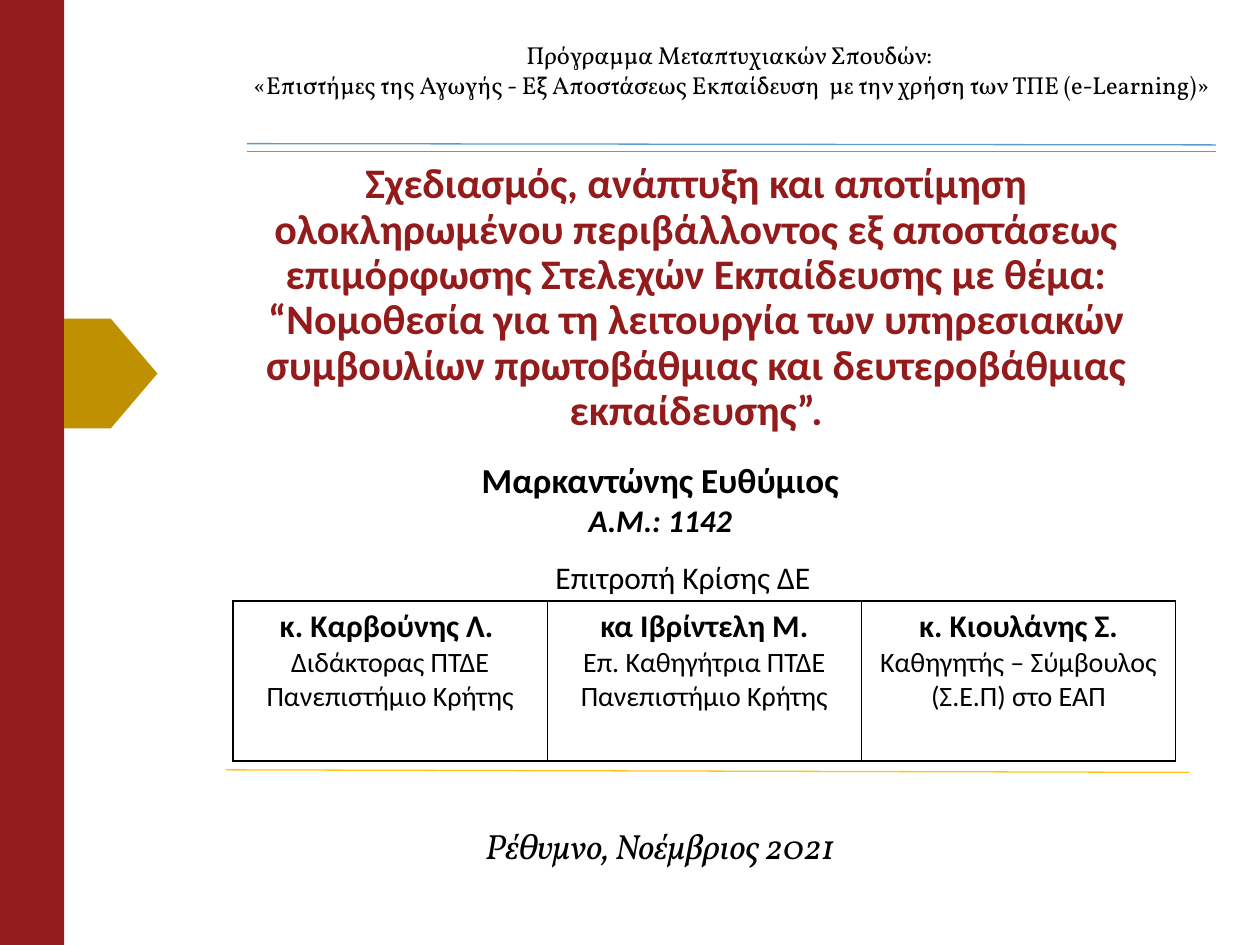
from lxml import etree
from pptx import Presentation
from pptx.dml.color import RGBColor
from pptx.enum.shapes import MSO_CONNECTOR as Connector, MSO_SHAPE as Shape
from pptx.enum.text import MSO_ANCHOR as Anchor, MSO_AUTO_SIZE as AutoSize, PP_ALIGN as Align
from pptx.oxml import parse_xml
from pptx.oxml.ns import nsdecls, qn
from pptx.util import Inches, Pt

BLACK = RGBColor(0x00, 0x00, 0x00)
WHITE = RGBColor(0xFF, 0xFF, 0xFF)
RED = RGBColor(0x93, 0x1B, 0x1B)
OCHRE = RGBColor(0xBF, 0x90, 0x00)
BLUE = RGBColor(0x5B, 0x9B, 0xD5)
YELLOW = RGBColor(0xFF, 0xC6, 0x1A)


def write(frame, text, size, first=True, font="Calibri", color=BLACK,
          bold=False, italic=False, spacing=1.0):
    """Put one centred paragraph in the frame, after the others unless first."""
    frame.word_wrap = True
    para = frame.paragraphs[0] if first else frame.add_paragraph()
    para.alignment = Align.CENTER
    para.line_spacing = spacing
    span = para.add_run()
    span.text = text
    span.font.name = font
    span.font.size = Pt(size)
    span.font.bold = bold
    span.font.italic = italic
    span.font.color.rgb = color


def add_text_box(left, top, width, height):
    box = page.shapes.add_textbox(Inches(left), Inches(top), Inches(width), Inches(height))
    return box.text_frame


deck = Presentation()
deck.slide_width = Inches(10)
deck.slide_height = Inches(7.5)
page = deck.slides.add_slide(deck.slide_layouts[5])

# Side band and pointer
for kind, left, top, width, height, color in (
    (Shape.RECTANGLE, 0, 0, 0.51, 7.5, RED),
    (Shape.PENTAGON, 0.51, 2.53, 0.74, 0.87, OCHRE),
):
    shape = page.shapes.add_shape(kind, Inches(left), Inches(top), Inches(width), Inches(height))
    shape.shadow.inherit = False
    shape.fill.solid()
    shape.fill.fore_color.rgb = color
    shape.line.fill.background()

# Title
title = page.shapes.title
title.left, title.top = Inches(2.01), Inches(1.39)
title.width, title.height = Inches(7.03), Inches(2.44)
frame = title.text_frame
frame.auto_size = AutoSize.NONE
frame.vertical_anchor = Anchor.BOTTOM
frame.margin_bottom = Inches(0.38)
write(frame, "Σχεδιασμός, ανάπτυξη και αποτίμηση ολοκληρωμένου περιβάλλοντος "
      "εξ αποστάσεως επιμόρφωσης Στελεχών Εκπαίδευσης με θέμα: “Νομοθεσία για τη "
      "λειτουργία των υπηρεσιακών συμβουλίων πρωτοβάθμιας και δευτεροβάθμιας "
      "εκπαίδευσης”.", 24, color=RED, bold=True, spacing=0.9)

# Rules
for left, top, right, bottom, color in (
    (1.96, 1.14, 9.65, 1.15, BLUE),
    (1.96, 1.2, 9.65, 1.2, BLUE),
    (1.79, 6.11, 9.44, 6.13, YELLOW),
):
    rule = page.shapes.add_connector(Connector.STRAIGHT, Inches(left), Inches(top),
                                     Inches(right), Inches(bottom))
    rule.line.color.rgb = color
    rule.line.width = Pt(0.75)
    etree.SubElement(rule._element.spPr, qn("a:effectLst"))

# Programme, author, committee heading and date
programme = add_text_box(1.76, 0.27, 8.1, 0.57)
write(programme, "Πρόγραμμα Μεταπτυχιακών Σπουδών: ", 14, font="Vollkorn")
write(programme, "«Επιστήμες της Αγωγής - Εξ Αποστάσεως Εκπαίδευση  με την χρήση "
      "των ΤΠΕ (e-Learning)»", 14, first=False, font="Vollkorn")

author = add_text_box(1.5, 3.59, 7.48, 0.74)
write(author, "Μαρκαντώνης Ευθύμιος", 20, bold=True)
write(author, "Α.Μ.: 1142", 18, first=False, bold=True, italic=True)

write(add_text_box(1.68, 4.38, 7.48, 0.4), "Επιτροπή Κρίσης ΔΕ", 18)

date = add_text_box(1.3, 6.49, 7.88, 0.44)
date.vertical_anchor = Anchor.MIDDLE
write(date, "Ρέθυμνο, Νοέμβριος 2021", 20, font="Vollkorn", italic=True)

# Committee
committee = (
    ("κ. Καρβούνης Λ. ", "Διδάκτορας ΠΤΔΕ", "Πανεπιστήμιο Κρήτης"),
    ("κα Ιβρίντελη M.", "Επ. Καθηγήτρια ΠΤΔΕ", "Πανεπιστήμιο Κρήτης"),
    ("κ. Κιουλάνης Σ.", "Καθηγητής – Σύμβουλος (Σ.Ε.Π) στο ΕΑΠ"),
)
table = page.shapes.add_table(1, len(committee), Inches(1.85), Inches(4.77),
                              Inches(7.48), Inches(1.27)).table
for cell, (name, *posts) in zip(table.rows[0].cells, committee):
    write(cell.text_frame, name, 18, bold=True)
    for post in posts:
        write(cell.text_frame, post, 16, first=False)
    cell.fill.solid()
    cell.fill.fore_color.rgb = WHITE
    for index, side in enumerate(("lnL", "lnR", "lnT", "lnB")):
        border = parse_xml(f'<a:{side} {nsdecls("a")} w="{Pt(1)}"><a:solidFill>'
                           f'<a:srgbClr val="{BLACK}"/></a:solidFill></a:{side}>')
        cell._tc.get_or_add_tcPr().insert(index, border)

deck.save("out.pptx")
